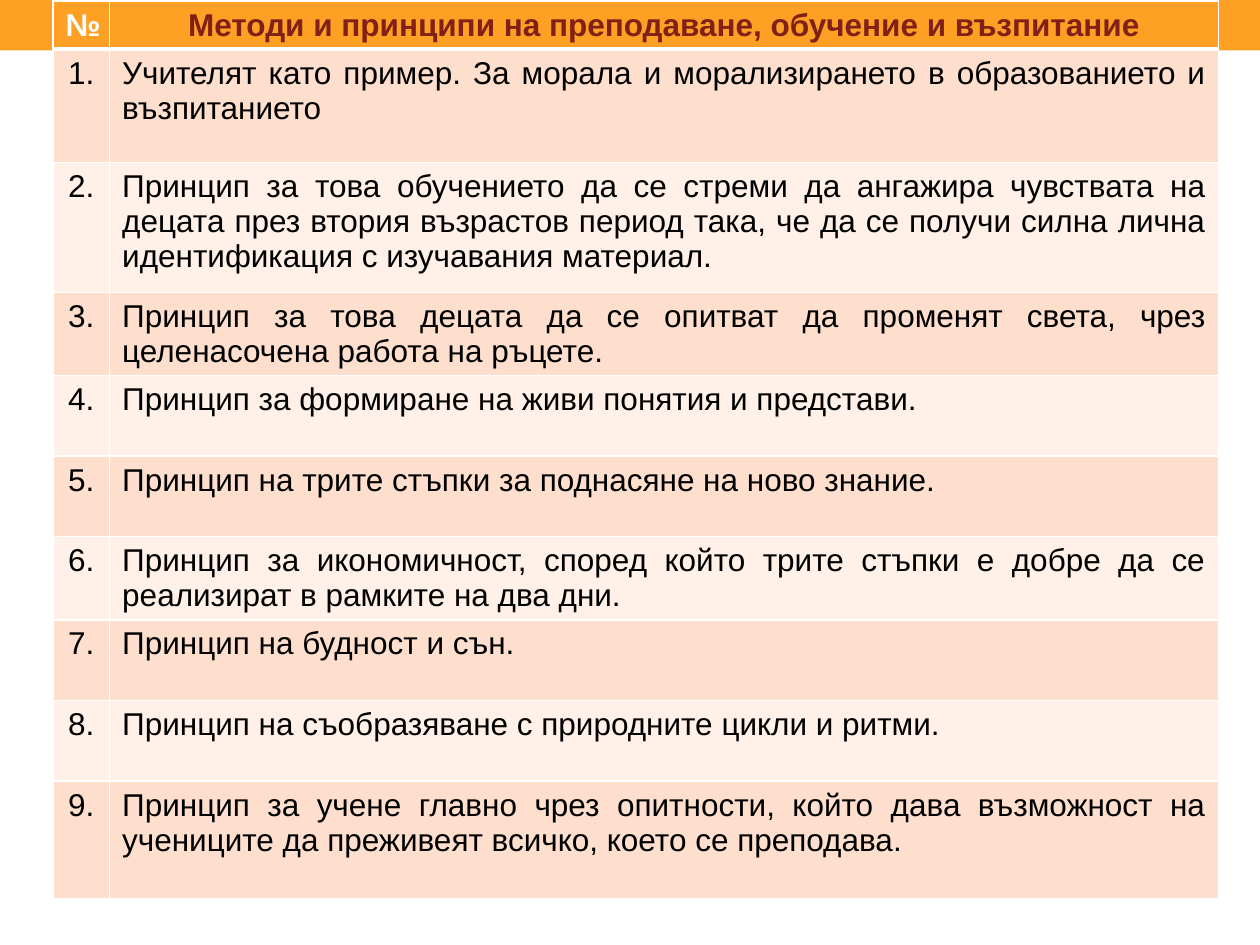
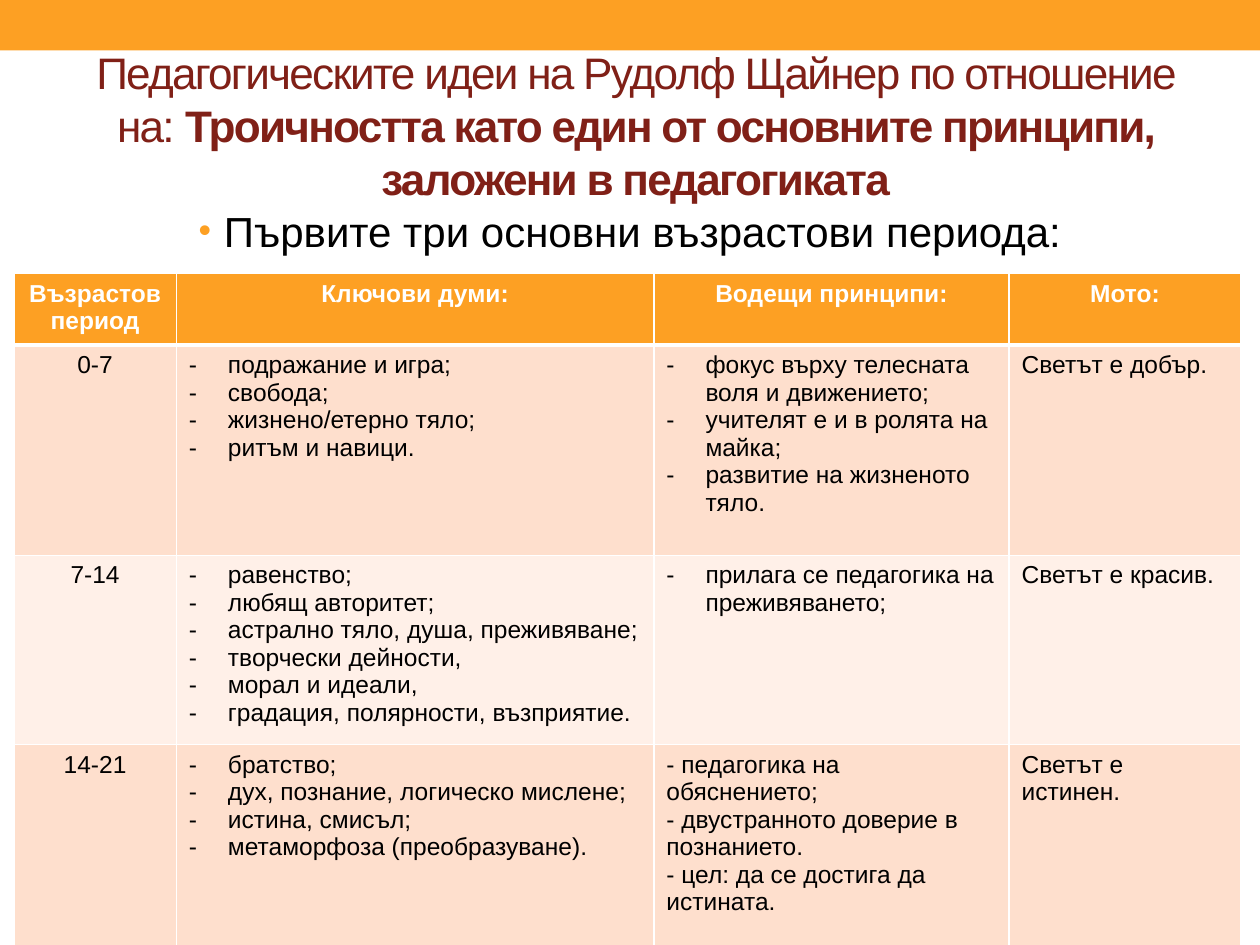
from dataclasses import dataclass

import pptx
import pptx.dml.color
import pptx.enum.shapes
import pptx.enum.text
import pptx.oxml.ns
import pptx.util
from lxml import etree

Inches = pptx.util.Inches
Align = pptx.enum.text.PP_ALIGN

FONT = "Arial"
ORANGE = "FDA023"
MAROON = "802017"
WHITE = "FFFFFF"
BLACK = "000000"
ROW_FILLS = ("FEDFCD", "FFF0E8")


@dataclass
class Bullet:
    symbol: str
    indent: float
    color: str | None = None
    percent: int = 100


@dataclass
class Cell:
    lines: list[str]
    align: Align = Align.LEFT
    color: str = BLACK
    bold: bool = False
    bullet: Bullet | None = None


DASH = Bullet("-", 0.31)
DOT = Bullet("•", 0.2, ORANGE, 85)


def rgb(color: str) -> pptx.dml.color.RGBColor:
    return pptx.dml.color.RGBColor.from_string(color)


def add_child(parent, tag: str, **attributes):
    child = etree.SubElement(parent, pptx.oxml.ns.qn(tag))
    for name, value in attributes.items():
        child.set(name, str(value))
    return child


def set_bullet(para, bullet: Bullet) -> None:
    properties = para._p.get_or_add_pPr()
    properties.set("marL", str(Inches(bullet.indent)))
    properties.set("indent", str(-Inches(bullet.indent)))
    if bullet.color:
        add_child(add_child(properties, "a:buClr"), "a:srgbClr", val=bullet.color)
    add_child(properties, "a:buSzPct", val=bullet.percent * 1000)
    add_child(properties, "a:buFont", typeface=FONT)
    add_child(properties, "a:buChar", char=bullet.symbol)


def add_span(para, text: str, *, size: float, color: str = BLACK,
             bold: bool = False, spacing: float = 0) -> None:
    """Append formatted text; spacing is the letter spacing in points."""
    span = para.add_run()
    span.text = text
    span.font.name = FONT
    span.font.size = pptx.util.Pt(size)
    span.font.bold = bold
    span.font.color.rgb = rgb(color)
    if spacing:
        span._r.get_or_add_rPr().set("spc", str(round(spacing * 100)))


def set_borders(cell, bottom: int) -> None:
    properties = cell._tc.get_or_add_tcPr()
    for side, width in zip("LRTB", (1, 1, 1, bottom)):
        line = add_child(properties, f"a:ln{side}", w=pptx.util.Pt(width))
        add_child(add_child(line, "a:solidFill"), "a:srgbClr", val=WHITE)


def fill_cell(target, cell: Cell, size: float, fill: str, bottom: int) -> None:
    set_borders(target, bottom)
    target.fill.solid()
    target.fill.fore_color.rgb = rgb(fill)
    frame = target.text_frame
    for index, line in enumerate(cell.lines):
        para = frame.add_paragraph() if index else frame.paragraphs[0]
        para.alignment = cell.align
        if cell.bullet:
            set_bullet(para, cell.bullet)
        add_span(para, line, size=size, color=cell.color, bold=cell.bold)


def add_grid(page, left: float, top: float, widths: list[float], heights: list[float],
             rows: list[list[Cell]], size: float) -> None:
    """Draw a table with an orange header row and alternating body rows."""
    table = page.shapes.add_table(
        len(heights), len(widths), Inches(left), Inches(top),
        Inches(sum(widths)), Inches(sum(heights))).table
    for column, width in zip(table.columns, widths):
        column.width = Inches(width)
    for number, (height, cells) in enumerate(zip(heights, rows)):
        table.rows[number].height = Inches(height)
        fill = ROW_FILLS[(number - 1) % 2] if number else ORANGE
        for column, cell in enumerate(cells):
            fill_cell(table.cell(number, column), cell, size, fill, 1 if number else 3)


def header(text: str, color: str = WHITE) -> Cell:
    return Cell([text], Align.CENTER, color, bold=True)


def add_page(deck):
    """Add a blank slide with the orange band along its top edge."""
    page = deck.slides.add_slide(deck.slide_layouts[6])
    band = page.shapes.add_shape(pptx.enum.shapes.MSO_SHAPE.RECTANGLE,
                                 0, 0, deck.slide_width, Inches(0.4))
    band.shadow.inherit = False
    band.fill.solid()
    band.fill.fore_color.rgb = rgb(ORANGE)
    band.line.fill.background()
    return page


def add_centered_box(page, left: float, top: float, width: float, height: float,
                     anchor=pptx.enum.text.MSO_ANCHOR.TOP):
    """Add a wrapping text box and return its centred first paragraph."""
    frame = page.shapes.add_textbox(
        Inches(left), Inches(top), Inches(width), Inches(height)).text_frame
    frame.word_wrap = True
    frame.vertical_anchor = anchor
    para = frame.paragraphs[0]
    para.alignment = Align.CENTER
    return para


PRINCIPLES = [
    "Учителят като пример. За морала и морализирането в образованието и възпитанието",
    "Принцип за това обучението да се стреми да ангажира чувствата на децата през втория "
    "възрастов период така, че да се получи силна лична идентификация с изучавания материал.",
    "Принцип за това децата да се опитват да променят света, чрез целенасочена работа на ръцете.",
    "Принцип за формиране на живи понятия и представи.",
    "Принцип на трите стъпки за поднасяне на ново знание.",
    "Принцип за икономичност, според който трите стъпки е добре да се реализират "
    "в рамките на два дни.",
    "Принцип на будност и сън.",
    "Принцип на съобразяване с природните цикли и ритми.",
    "Принцип за учене главно чрез опитности, който дава възможност на учениците "
    "да преживеят всичко, което се преподава.",
]


def build_principles(deck) -> None:
    page = add_page(deck)
    rows = [[header("№"),
             header("Методи и принципи на преподаване, обучение и възпитание", MAROON)]]
    for number, principle in enumerate(PRINCIPLES, 1):
        rows.append([Cell([f"{number}."], Align.CENTER), Cell([principle], Align.JUSTIFY)])
    heights = [0.38, 0.9, 1.03, 0.66, 0.64, 0.64, 0.66, 0.64, 0.64, 0.93]
    add_grid(page, 0.42, 0.01, [0.45, 8.8], heights, rows, size=18)


def period(age: str, keywords: list[str], principles: list[str], motto: str,
           bullet: Bullet | None = DASH) -> list[Cell]:
    return [Cell([age], Align.CENTER), Cell(keywords, bullet=DASH),
            Cell(principles, bullet=bullet), Cell([motto])]


PERIODS = [
    period("0-7",
           ["подражание и игра;", "свобода;", "жизнено/етерно тяло;", "ритъм и навици."],
           ["фокус върху телесната воля и движението;", "учителят е и в ролята на майка;",
            "развитие на жизненото тяло."],
           "Светът е добър."),
    period("7-14",
           ["равенство;", "любящ авторитет;", "астрално тяло, душа, преживяване;",
            "творчески дейности,", "морал и идеали,", "градация, полярности, възприятие."],
           ["прилага се педагогика на преживяването;"],
           "Светът е красив."),
    period("14-21",
           ["братство;", "дух, познание, логическо мислене;", "истина, смисъл;",
            "метаморфоза (преобразуване)."],
           ["- педагогика на обяснението;", "- двустранното доверие в познанието.",
            "- цел: да се достига да истината."],
           "Светът е истинен.", bullet=None),
]


def build_periods(deck) -> None:
    page = add_page(deck)
    subtitle = add_centered_box(page, 0.5, 1.58, 9, 0.5)
    set_bullet(subtitle, DOT)
    add_span(subtitle, "Първите три основни възрастови периода:", size=24)

    headings = ["Възрастов период", "Ключови думи:", "Водещи принципи:", "Мото:"]
    rows = [[header(heading) for heading in headings], *PERIODS]
    add_grid(page, 0.11, 2.17, [1.29, 3.79, 2.82, 1.84], [0.55, 1.67, 1.45, 1.62],
             rows, size=14)

    title = add_centered_box(page, 0.42, 0.45, 9.25, 1.08, pptx.enum.text.MSO_ANCHOR.MIDDLE)
    title_format = {"size": 25.2, "color": MAROON, "spacing": -1}
    add_span(title, "Педагогическите идеи на Рудолф Щайнер по отношение на: ", **title_format)
    add_span(title, "Троичността като един от основните принципи, заложени в педагогиката",
             bold=True, **title_format)


def main() -> None:
    deck = pptx.Presentation()
    deck.slide_width, deck.slide_height = Inches(10), Inches(7.5)
    build_principles(deck)
    build_periods(deck)
    deck.save("out.pptx")


if __name__ == "__main__":
    main()
